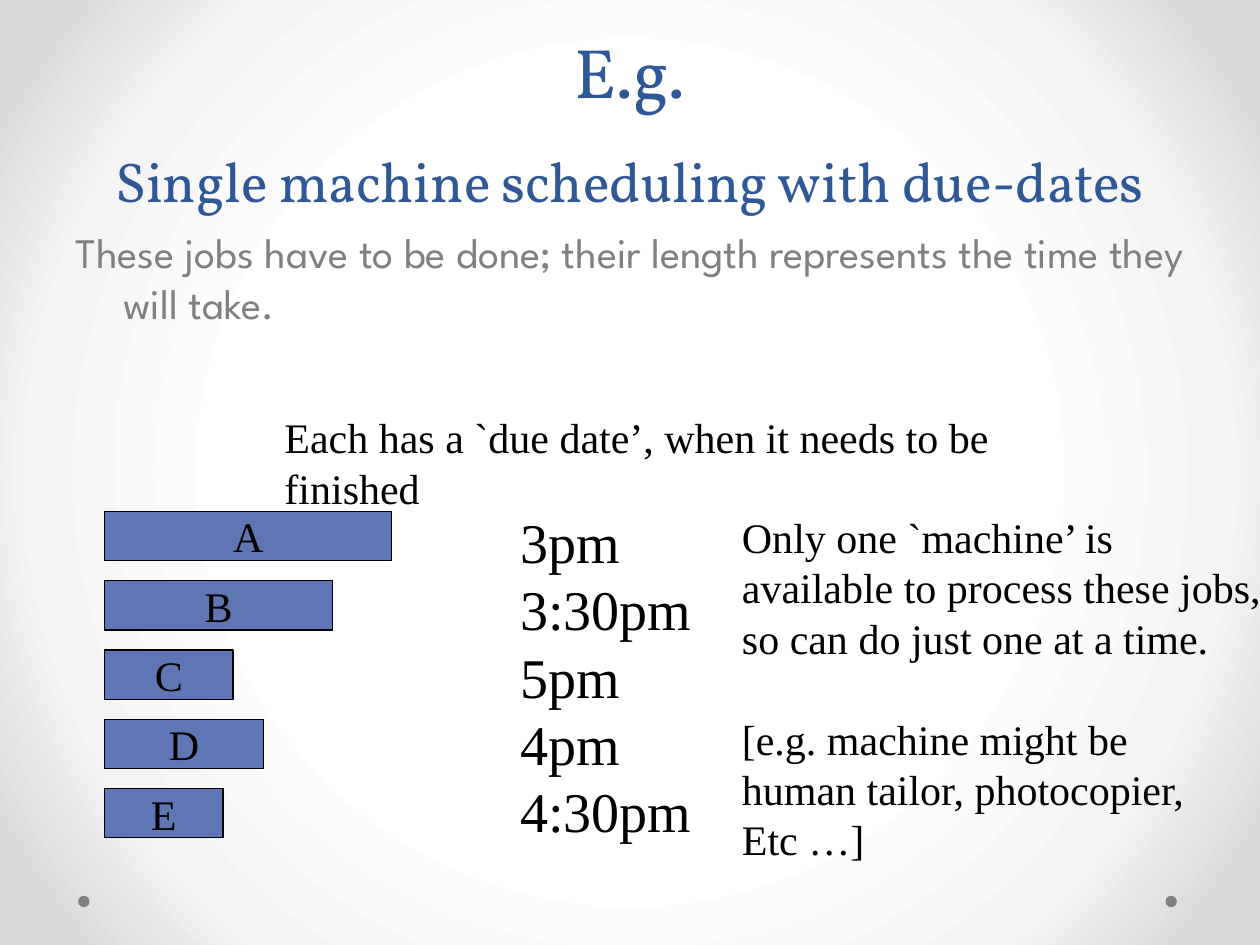
"""Build a slide that introduces single machine scheduling with due dates."""
from dataclasses import dataclass

from pptx import Presentation
from pptx.dml.color import RGBColor
from pptx.enum.shapes import MSO_SHAPE
from pptx.enum.text import MSO_ANCHOR, MSO_AUTO_SIZE, PP_ALIGN
from pptx.oxml import parse_xml
from pptx.oxml.ns import nsdecls
from pptx.util import Inches, Pt

RECTANGLE, OVAL = MSO_SHAPE.RECTANGLE, MSO_SHAPE.OVAL
CENTER, LEFT = PP_ALIGN.CENTER, PP_ALIGN.LEFT
MIDDLE, BOTTOM = MSO_ANCHOR.MIDDLE, MSO_ANCHOR.BOTTOM
NO_FIT = MSO_AUTO_SIZE.NONE

COLORS = {"title": "2F5897", "body": "808080", "job": "6076B4", "ink": "000000"}
BACKDROP = ((50, "FFFFFF"), (76, "F4F4F4"), (92, "DADADA"))
TITLE_FONT, BODY_FONT, NOTE_FONT = "Vollkorn", "League Spartan", "Times New Roman"
JOB_LEFT, JOB_TOP, JOB_PITCH, JOB_HEIGHT = 0.83, 4.06, 0.55, 0.39
DOT_LEFTS, DOT_TOP, DOT_SIZE = (0.62, 9.25), 7.11, 0.09
LINE_HEIGHT = 1.2


@dataclass
class Job:
    name: str
    length: float
    due: str


@dataclass
class Note:
    left: float
    top: float
    width: float
    height: float
    size: int
    lines: list[str]
    gap_before: int | None = None


JOBS = [
    Job("A", 2.28, "3pm"),
    Job("B", 1.81, "3:30pm"),
    Job("C", 1.02, "5pm"),
    Job("D", 1.26, "4pm"),
    Job("E", 0.94, "4:30pm"),
]
NOTES = [
    Note(2.16, 3.22, 6.7, 0.5, 24,
         ["Each has a `due date’, when it needs to be finished"]),
    Note(4.03, 3.98, 1.6, 2.77, 32, [job.due for job in JOBS]),
    Note(5.79, 4.01, 4.33, 2.93, 24,
         ["Only one `machine’ is available to process these jobs, "
          "so can do just one at a time.",
          "[e.g. machine might be", "human tailor, photocopier,", "Etc …]"],
         gap_before=1),
]


def color(name: str) -> RGBColor:
    """Return a palette colour."""
    return RGBColor.from_string(COLORS[name])


def style(font, face: str, size: int, ink: str) -> None:
    """Set the face, size and colour of a font."""
    font.name, font.size = face, Pt(size)
    font.color.rgb = color(ink)


def place(shape, left: float, top: float, width: float, height: float) -> None:
    """Move and size a shape, in inches."""
    shape.left, shape.top = Inches(left), Inches(top)
    shape.width, shape.height = Inches(width), Inches(height)


def paint_background(page) -> None:
    """Give the page a circular gradient."""
    stops = "".join(f'<a:gs pos="{pos * 1000}"><a:srgbClr val="{shade}"/></a:gs>'
                    for pos, shade in BACKDROP)
    page.element.cSld.insert(0, parse_xml(
        f'<p:bg {nsdecls("p", "a")}><p:bgPr><a:gradFill rotWithShape="1">'
        f'<a:gsLst>{stops}</a:gsLst><a:path path="circle">'
        '<a:fillToRect l="50000" t="50000" r="50000" b="50000"/></a:path>'
        '</a:gradFill><a:effectLst/></p:bgPr></p:bg>'))


def add_filled(page, kind, left: float, top: float, width: float,
               height: float, fill: str):
    """Add a flat shape without an outline."""
    shape = page.shapes.add_shape(kind, Inches(left), Inches(top),
                                  Inches(width), Inches(height))
    shape.shadow.inherit = False
    shape.fill.solid()
    shape.fill.fore_color.rgb = color(fill)
    shape.line.fill.background()
    return shape


def fill_title(page) -> None:
    """Write the two-line title."""
    title = page.shapes.title
    place(title, 0.5, 0, 9, 1.75)
    frame = title.text_frame
    frame.auto_size, frame.vertical_anchor = NO_FIT, BOTTOM
    para = frame.paragraphs[0]
    para.text = "E.g.\vSingle machine scheduling with due-dates"
    para.alignment, para.line_spacing = CENTER, Pt(58)
    for span, size in zip(para.runs, (40, 32)):
        style(span.font, TITLE_FONT, size, "title")


def fill_body(page) -> None:
    """Write the introduction with a hanging indent."""
    body = page.placeholders[1]
    place(body, 0.5, 1.75, 9, 4.95)
    body.text_frame.auto_size = NO_FIT
    para = body.text_frame.paragraphs[0]
    para.text = ("These jobs have to be done; their length represents "
                 "the time they will take.")
    style(para.font, BODY_FONT, 24, "body")
    properties = para._p.get_or_add_pPr()
    properties.set("marL", str(Inches(0.38)))
    properties.set("indent", str(Inches(-0.38)))
    properties.insert(0, parse_xml(f'<a:buNone {nsdecls("a")}/>'))


def add_job(page, job: Job, top: float) -> None:
    """Draw a job as a bar as long as its duration."""
    box = add_filled(page, RECTANGLE, JOB_LEFT, top, job.length, JOB_HEIGHT, "job")
    box.line.color.rgb = color("ink")
    box.line.width = Pt(0.75)
    frame = box.text_frame
    frame.word_wrap, frame.vertical_anchor = False, MIDDLE
    para = frame.paragraphs[0]
    para.text, para.alignment = job.name, CENTER
    style(para.font, NOTE_FONT, 24, "ink")


def add_note(page, note: Note) -> None:
    """Add a text box with one paragraph per line."""
    box = page.shapes.add_textbox(Inches(note.left), Inches(note.top),
                                  Inches(note.width), Inches(note.height))
    frame = box.text_frame
    frame.word_wrap = True
    frame.text = "\n".join(note.lines)
    pitch = Pt(note.size * LINE_HEIGHT)
    for index, para in enumerate(frame.paragraphs):
        para.alignment, para.line_spacing = LEFT, pitch
        style(para.font, NOTE_FONT, note.size, "ink")
        if index == note.gap_before:
            para.space_before = pitch


def main() -> None:
    """Build and save the deck."""
    deck = Presentation()
    deck.slide_width, deck.slide_height = Inches(10), Inches(7.5)
    page = deck.slides.add_slide(deck.slide_layouts[1])
    paint_background(page)
    for left in DOT_LEFTS:
        add_filled(page, OVAL, left, DOT_TOP, DOT_SIZE, DOT_SIZE, "body")
    fill_title(page)
    fill_body(page)
    for row, job in enumerate(JOBS):
        add_job(page, job, JOB_TOP + row * JOB_PITCH)
    for note in NOTES:
        add_note(page, note)
    deck.save("out.pptx")


if __name__ == "__main__":
    main()
